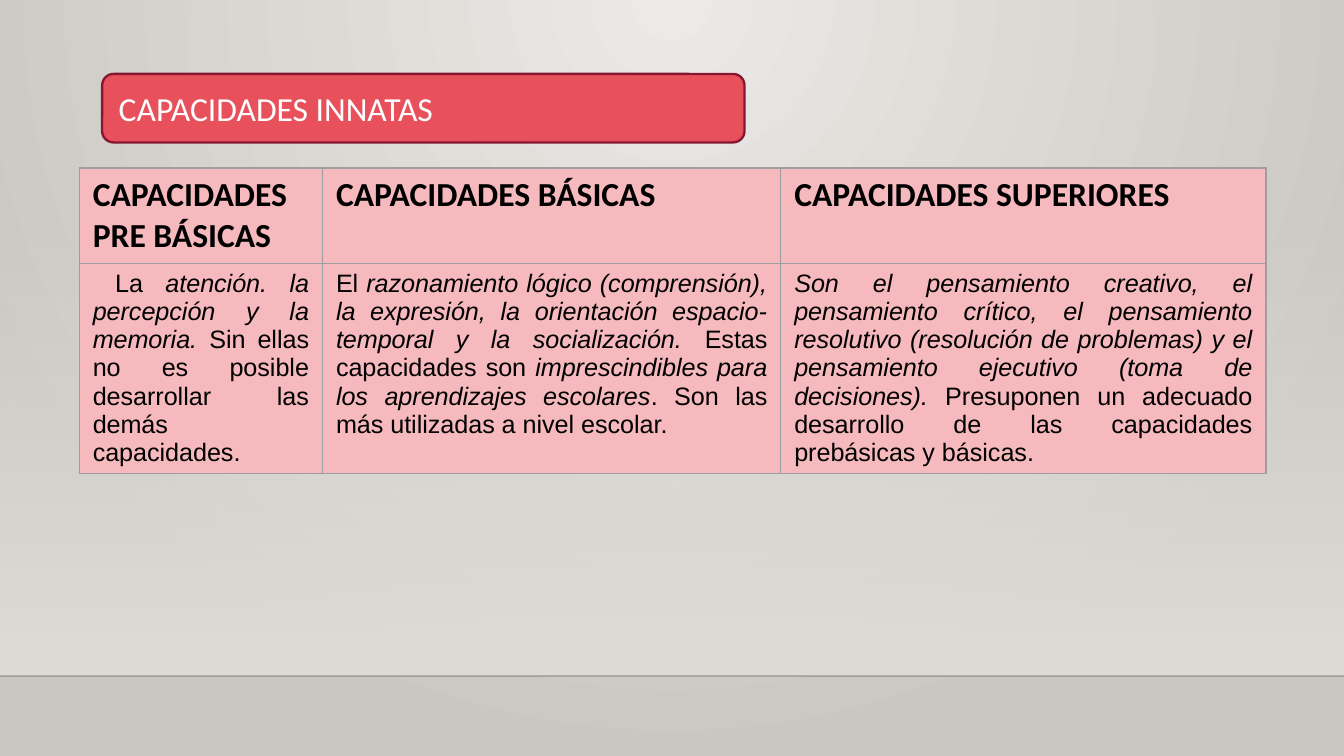
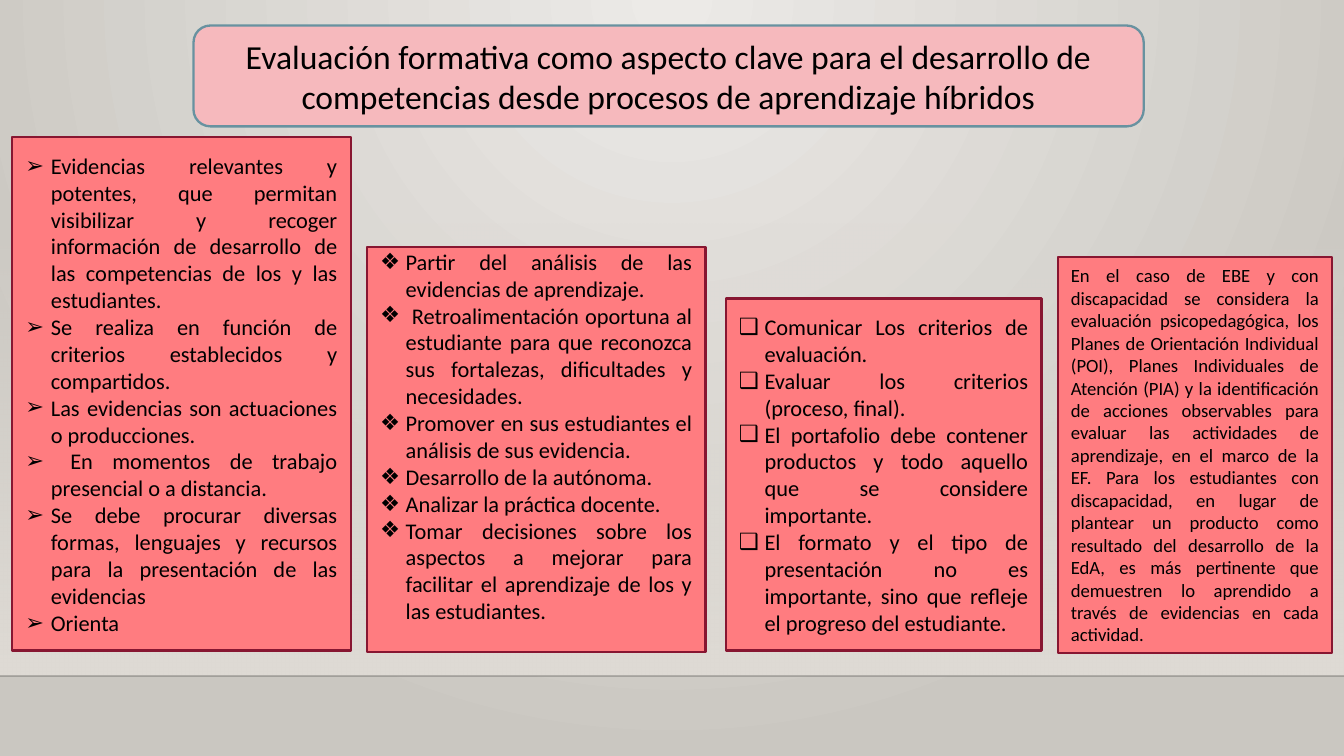
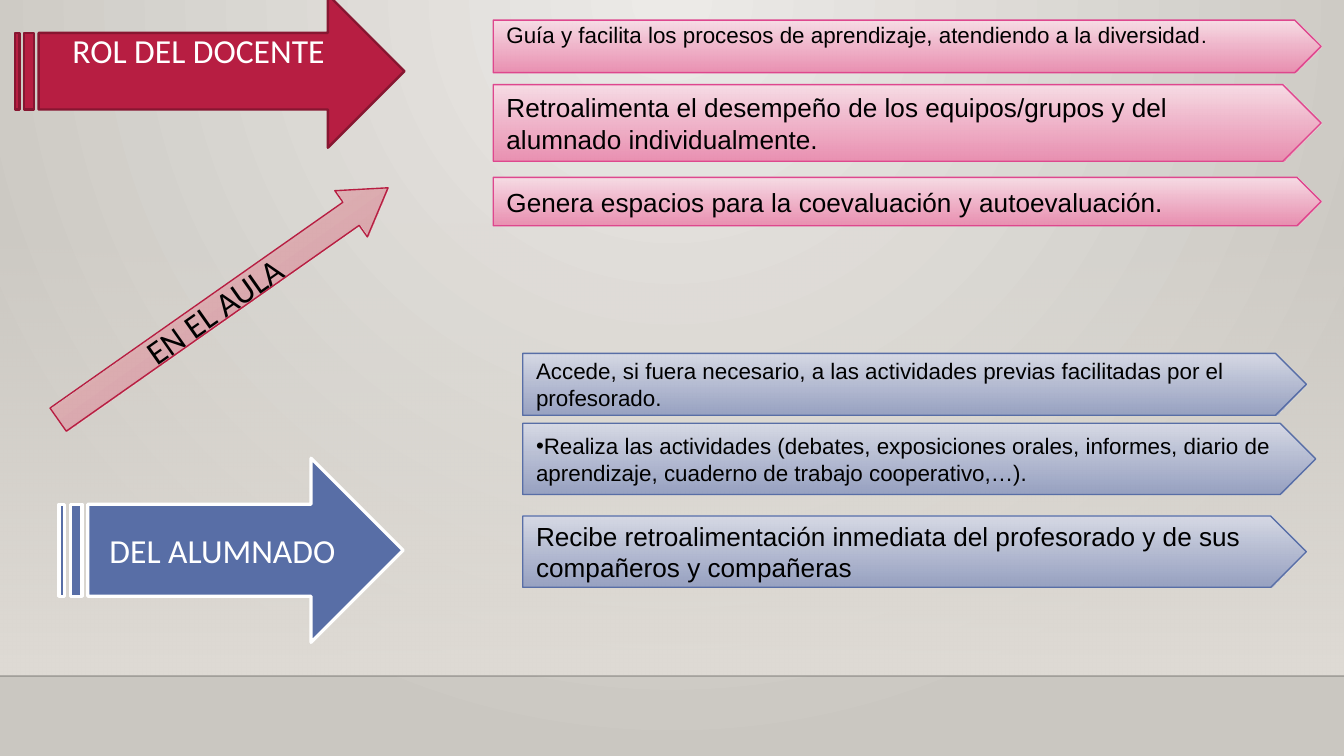
from lxml import etree
from pptx import Presentation
from pptx.dml.color import RGBColor
from pptx.enum import shapes, text
from pptx.oxml.ns import qn
from pptx.util import Inches, Pt

BLACK = RGBColor(0x00, 0x00, 0x00)
WHITE = RGBColor(0xFF, 0xFF, 0xFF)
RED = RGBColor(0xE8, 0x50, 0x5B)
CRIMSON = RGBColor(0xB7, 0x1E, 0x42)
MAROON = RGBColor(0x87, 0x16, 0x31)
ROSE = RGBColor(0xF6, 0xB9, 0xBD)
CORAL = RGBColor(0xFF, 0x7C, 0x80)
TEAL = RGBColor(0x68, 0x92, 0xA0)
PINK = RGBColor(0xDE, 0x47, 0x8E)
BLUE = RGBColor(0x58, 0x6E, 0xA6)
GREY = RGBColor(0x9E, 0x9E, 0x9E)
# Gradient stops: position, colour, opacity (percent)
BACK_GRAD = [(0, "ECEAE7", 100), (100, "CAC7C1", 100)]
BAND_GRAD = [(0, "DFDBD5", 0), (100, "DFDBD5", 100)]
PINK_GRAD = [(0, "F7DCE5", 100), (100, "EA8AAE", 92)]
BLUE_GRAD = [(0, "D6D9E5", 100), (100, "929DC0", 92)]
ROSE_GRAD = [(0, "EAD1D3", 100), (100, "CD828A", 92)]

SHAPE = shapes.MSO_SHAPE
LEFT, CENTER, JUSTIFY = (text.PP_ALIGN.LEFT, text.PP_ALIGN.CENTER,
                         text.PP_ALIGN.JUSTIFY)
ITALIC = {"italic": True}

# Slide 1 content
CAPACITY_WIDTHS, CAPACITY_HEIGHTS = (1.81, 3.41, 3.61), (0.49, 1.54)
CAPACITIES = [
    ("CAPACIDADES PRE BÁSICAS", [
        (" La ", {}),
        ("atención. la percepción y la memoria. ", ITALIC),
        ("Sin ellas no es posible desarrollar las demás capacidades. ", {})]),
    ("CAPACIDADES BÁSICAS", [
        ("El ", {}),
        ("razonamiento lógico (comprensión), la expresión, la orientación "
         "espacio-temporal y la socialización. ", ITALIC),
        ("Estas capacidades son ", {}),
        ("imprescindibles para los aprendizajes escolares", ITALIC),
        (". Son las más utilizadas a nivel escolar. ", {})]),
    ("CAPACIDADES SUPERIORES", [
        ("Son el pensamiento creativo, el pensamiento crítico, el pensamiento "
         "resolutivo (resolución de problemas) y el pensamiento ejecutivo "
         "(toma de decisiones). ", ITALIC),
        ("Presuponen un adecuado desarrollo de las capacidades prebásicas y "
         "básicas. ", {})]),
]

# Slide 2 content: box, bullet, size, bottom margin, paragraphs
EVALUATION = ("Evaluación formativa como aspecto clave para el desarrollo de "
              "competencias desde procesos de aprendizaje híbridos")
PANELS = [
    ((2.73, 1.84, 2.52, 3.01), "❖", 12, 0.25, [
        "Partir del análisis de las evidencias de aprendizaje.",
        " Retroalimentación oportuna al estudiante para que reconozca sus "
        "fortalezas, dificultades y necesidades.",
        "Promover en sus estudiantes el análisis de sus evidencia.",
        "Desarrollo de la autónoma.",
        "Analizar la práctica docente.",
        "Tomar decisiones sobre los aspectos a mejorar para facilitar el "
        "aprendizaje de los y las estudiantes. "]),
    ((0.09, 1.02, 2.52, 3.82), "➢", 12, 0.05, [
        "Evidencias relevantes y potentes, que permitan visibilizar y recoger "
        "información de desarrollo de las competencias de los y las estudiantes. ",
        "Se realiza en función de criterios establecidos y compartidos.",
        "Las evidencias son actuaciones o producciones.",
        " En momentos de trabajo presencial o a distancia.",
        "Se debe procurar diversas formas, lenguajes y recursos para la "
        "presentación de las evidencias",
        "Orienta"]),
    ((5.4, 2.22, 2.35, 2.62), "❑", 12, 0.05, [
        "Comunicar Los criterios de evaluación. ",
        "Evaluar los criterios (proceso, final).",
        "El portafolio debe contener productos y todo aquello que se considere "
        "importante.",
        "El formato y el tipo de presentación no es importante, sino que "
        "refleje el progreso del estudiante. "]),
    ((7.87, 1.91, 2.04, 2.95), None, 10, 0.05, [
        "En el caso de EBE y con discapacidad se considera la evaluación "
        "psicopedagógica, los Planes de Orientación Individual (POI), Planes "
        "Individuales de Atención (PIA) y la identificación de acciones "
        "observables para evaluar las actividades de aprendizaje, en el marco "
        "de la EF. Para los estudiantes con discapacidad, en lugar de plantear "
        "un producto como resultado del desarrollo de la EdA, es más pertinente "
        "que demuestren lo aprendido a través de evidencias en cada actividad. "]),
]

# Slide 3 content: left edge, gradient, line, then
# (top, width, height, size, bottom margin, bullet, paragraph)
ROLES = [
    (3.67, PINK_GRAD, PINK, [
        (0.15, 6.16, 0.39, 12, 0.23, None, [
            ("Guía y facilita los procesos de aprendizaje, atendiendo a la "
             "diversidad", {}), (".", {"size": Pt(11)})]),
        (0.63, 6.16, 0.57, 14, 0.05, None,
         "Retroalimenta el desempeño de los equipos/grupos y del alumnado "
         "individualmente."),
        (1.32, 6.16, 0.36, 14, 0.05, None,
         "Genera espacios para la coevaluación y autoevaluación.")]),
    (3.89, BLUE_GRAD, BLUE, [
        (2.63, 5.83, 0.46, 12, 0.05, None,
         "Accede, si fuera necesario, a las actividades previas facilitadas por "
         "el profesorado."),
        (3.15, 5.9, 0.53, 12, 0.05, "•",
         "Realiza las actividades (debates, exposiciones orales, informes, "
         "diario de aprendizaje, cuaderno de trabajo cooperativo,…)."),
        (3.84, 5.83, 0.53, 14, 0.05, None,
         "Recibe retroalimentación inmediata del profesorado y de sus "
         "compañeros y compañeras")]),
]


def sub(parent, tag, **attrs):
    el = etree.SubElement(parent, qn(tag))
    for k, v in attrs.items():
        el.set(k, str(v))
    return el


def set_gradient(fill, holder, stops, radial=False):
    """Fill with a vertical gradient, or a radial one from the top centre."""
    fill.gradient()
    grad = holder.find(qn("a:gradFill"))
    for child in list(grad):
        grad.remove(child)
    gs_list = sub(grad, "a:gsLst")
    for pos, color, alpha in stops:
        gs = sub(gs_list, "a:gs", pos=pos * 1000)
        clr = sub(gs, "a:srgbClr", val=color)
        if alpha < 100:
            sub(clr, "a:alpha", val=alpha * 1000)
    if radial:
        circle = sub(grad, "a:path", path="circle")
        sub(circle, "a:fillToRect", l=43000, t=0, r=43000, b=100000)
    else:
        sub(grad, "a:lin", ang=5400000, scaled=0)


def write(tf, paragraphs, size, font="Calibri", color=BLACK, align=LEFT,
          bullet=None, indent=0, bold=False):
    tf.word_wrap = True
    for i, content in enumerate(paragraphs):
        p = tf.paragraphs[0] if i == 0 else tf.add_paragraph()
        p.alignment = align
        if bullet:
            pPr = p._p.get_or_add_pPr()
            pPr.set("marL", str(Inches(indent)))
            pPr.set("indent", str(-Inches(indent)))
            sub(pPr, "a:buFont", typeface="Arial")
            sub(pPr, "a:buChar", char=bullet)
        for words, extra in [(content, {})] if isinstance(content, str) else content:
            r = p.add_run()
            r.text = words
            fmt = {"name": font, "size": Pt(size), "bold": bold, **extra}
            for k, v in fmt.items():
                setattr(r.font, k, v)
            r.font.color.rgb = color


def add_box(s, kind, at, fill, line=None, width=1.25, paragraphs=(), bottom=0.05,
            **fmt):
    sp = s.shapes.add_shape(kind, *map(Inches, at))
    sp.shadow.inherit = False
    if isinstance(fill, list):
        set_gradient(sp.fill, sp.element.spPr, fill)
    else:
        sp.fill.solid()
        sp.fill.fore_color.rgb = fill
    if line is None:
        sp.line.fill.background()
    else:
        sp.line.color.rgb = line
        sp.line.width = Pt(width)
    if paragraphs:
        tf = sp.text_frame
        tf.vertical_anchor = text.MSO_ANCHOR.MIDDLE
        tf.margin_bottom = Inches(bottom)
        write(tf, paragraphs, **fmt)
    return sp


def dress_master(prs, s):
    """Give the master its background, floor band and floor line."""
    master = prs.slide_master
    fill = master.background.fill
    set_gradient(fill, master.element.find(".//" + qn("p:bgPr")), BACK_GRAD, True)
    band = add_box(s, SHAPE.RECTANGLE, (0, 1.66, 10, 3.37), BAND_GRAD)
    floor = s.shapes.add_connector(shapes.MSO_CONNECTOR.STRAIGHT, 0, Inches(5.03),
                                   Inches(10), Inches(5.03))
    floor.line.color.rgb = BLACK
    floor.line.width = Pt(1)
    sub(floor.element.spPr.find(".//" + qn("a:srgbClr")), "a:alpha", val=20000)
    sub(floor.element.spPr, "a:effectLst")
    for i, part in enumerate((band, floor)):
        part.element.find(".//" + qn("p:cNvPr")).set("id", str(101 + i))
        master.shapes.element.insert(2 + i, part.element)


def format_cell(cell):
    cell.fill.solid()
    cell.fill.fore_color.rgb = ROSE
    tcPr = cell._tc.get_or_add_tcPr()
    for i, side in enumerate(("a:lnL", "a:lnR", "a:lnT", "a:lnB")):
        ln = sub(tcPr, side, w=Pt(0.75))
        sub(sub(ln, "a:solidFill"), "a:srgbClr", val=GREY)
        tcPr.insert(i, ln)


def build_capacities(s):
    frame = s.shapes.add_table(2, 3, Inches(0.59), Inches(1.25),
                               Inches(sum(CAPACITY_WIDTHS)),
                               Inches(sum(CAPACITY_HEIGHTS)))
    table = frame.table
    table.first_row = table.horz_banding = False
    for row, height in zip(table.rows, CAPACITY_HEIGHTS):
        row.height = Inches(height)
    for i, (heading, body) in enumerate(CAPACITIES):
        table.columns[i].width = Inches(CAPACITY_WIDTHS[i])
        write(table.cell(0, i).text_frame, [heading], 18, bold=True)
        write(table.cell(1, i).text_frame, [body], 13.5, "Arial", align=JUSTIFY)
        for row in range(2):
            format_cell(table.cell(row, i))
    add_box(s, SHAPE.ROUNDED_RECTANGLE, (0.76, 0.55, 4.78, 0.51), RED, MAROON,
            paragraphs=["CAPACIDADES INNATAS "], size=18, color=WHITE, align=JUSTIFY)


def build_evaluation(s):
    add_box(s, SHAPE.ROUNDED_RECTANGLE, (1.44, 0.19, 7.07, 0.75), ROSE, TEAL,
            paragraphs=[EVALUATION], size=18, align=CENTER)
    for at, bullet, size, bottom, paragraphs in PANELS:
        add_box(s, SHAPE.RECTANGLE, at, CORAL, MAROON, paragraphs=paragraphs,
                bottom=bottom, size=size, align=JUSTIFY, bullet=bullet, indent=0.19)


def build_roles(s):
    # Role arrows
    title = {"size": 18, "align": CENTER}
    add_box(s, SHAPE.STRIPED_RIGHT_ARROW, (0.11, -0.04, 2.9, 1.14), CRIMSON, MAROON,
            paragraphs=["ROL DEL DOCENTE "], bottom=0.36, color=WHITE, **title)
    add_box(s, SHAPE.STRIPED_RIGHT_ARROW, (0.44, 3.41, 2.56, 1.37), BLUE, WHITE, 1.75,
            paragraphs=["DEL ALUMNADO"], color=WHITE, **title)
    arrow = add_box(s, SHAPE.RIGHT_ARROW, (0.16, 2.05, 3, 0.42), ROSE_GRAD, CRIMSON,
                    0.75, paragraphs=["EN EL AULA"], **title)
    arrow.rotation = 324.9
    arrow.adjustments[1] = 0.8
    # Duties of each role
    for left, grad, line, duties in ROLES:
        for top, width, height, size, bottom, bullet, duty in duties:
            add_box(s, SHAPE.PENTAGON, (left, top, width, height), grad, line, 0.75,
                    paragraphs=[duty], bottom=bottom, size=size, font="Arial",
                    bullet=bullet)


def main():
    prs = Presentation()
    prs.slide_width = Inches(10)
    prs.slide_height = Inches(10) * 9 // 16
    blank = prs.slide_layouts[6]
    for i, build in enumerate((build_capacities, build_evaluation, build_roles)):
        s = prs.slides.add_slide(blank)
        if i == 0:
            dress_master(prs, s)
        build(s)
    prs.save("out.pptx")


if __name__ == "__main__":
    main()
